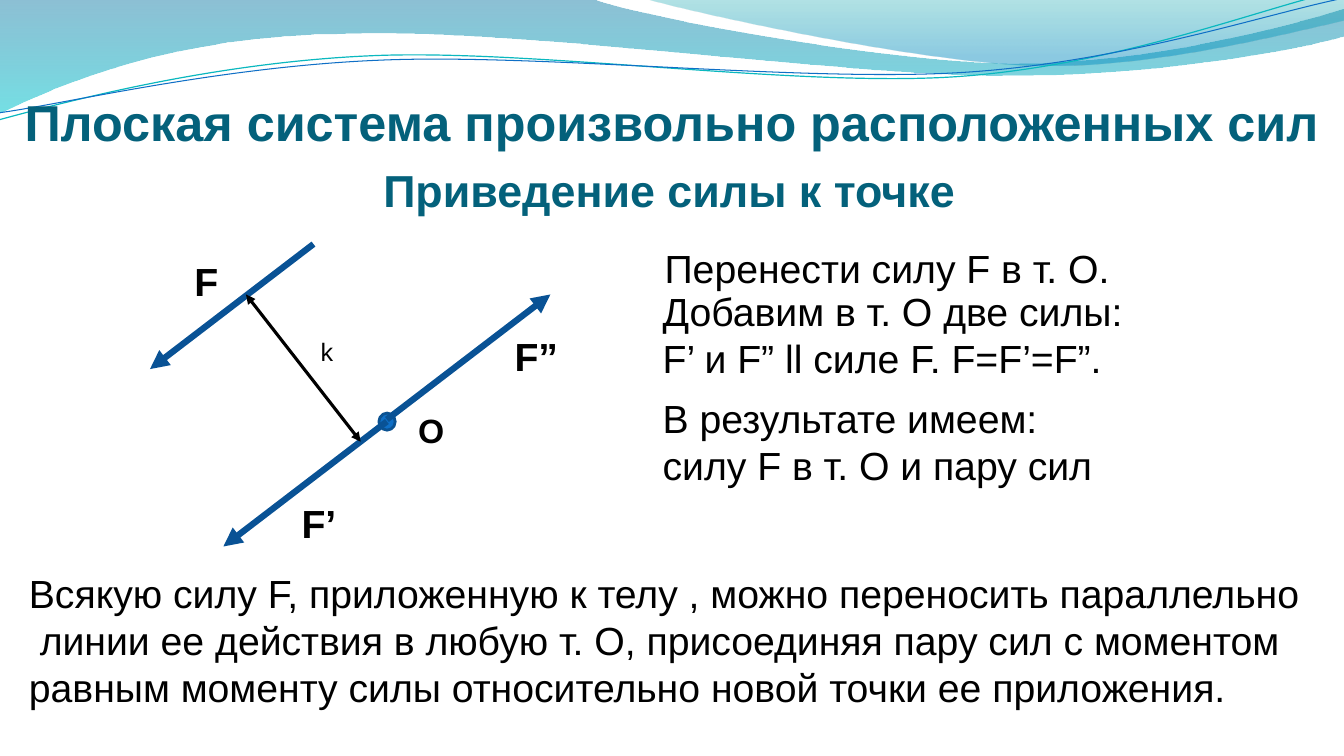
from dataclasses import dataclass

from lxml.etree import SubElement
from pptx import Presentation
from pptx.dml.color import RGBColor
from pptx.enum.shapes import MSO_CONNECTOR, MSO_SHAPE
from pptx.enum.text import MSO_AUTO_SIZE, PP_ALIGN
from pptx.oxml.ns import qn
from pptx.util import Cm, Pt


@dataclass(frozen=True)
class Theme:
    font: str = "Arial"
    heading: str = "04617B"
    ink: str = "000000"
    force: str = "095295"
    point_fill: str = "0F6FC6"
    point_line: str = "0B5292"
    teal_line: str = "0AB8BF"
    # Gradient stops: position, colour, opacity in percent
    wide_wave: tuple = ((0, "0074A1", 45), (1, "00C6CF", 55))
    right_wave: tuple = ((0, "00A1A9", 30), (0.8, "008BBF", 45))
    title_size: int = 36
    subtitle_size: int = 32
    body_size: int = 28
    point_size: int = 24
    arm_size: int = 18


THEME = Theme()
RIPPLE_ROTATION = 357.3


def rgb(value):
    return RGBColor.from_string(value)


def add_text(slide, text, left, top, width, height, size=THEME.body_size,
             color=THEME.ink, bold=False, align=PP_ALIGN.LEFT, wrap=False):
    frame = slide.shapes.add_textbox(Cm(left), Cm(top), Cm(width), Cm(height)).text_frame
    frame.word_wrap = wrap
    frame.auto_size = MSO_AUTO_SIZE.SHAPE_TO_FIT_TEXT
    for index, line in enumerate(text.split("\n")):
        paragraph = frame.paragraphs[0] if index == 0 else frame.add_paragraph()
        paragraph.alignment = align
        run = paragraph.add_run()
        run.text = line
        run.font.name = THEME.font
        run.font.size = Pt(size)
        run.font.bold = bold
        run.font.color.rgb = rgb(color)
        if not bold:
            run.font._element.set("kern", "0")


def add_segment(slide, start, end, color, weight, arrow_ends):
    """Straight line; arrow_ends holds headEnd and/or tailEnd."""
    segment = slide.shapes.add_connector(
        MSO_CONNECTOR.STRAIGHT, *(Cm(value) for value in (*start, *end)))
    segment.line.color.rgb = rgb(color)
    segment.line.width = Pt(weight)
    outline = segment.line._get_or_add_ln()
    for arrow_end in arrow_ends:
        SubElement(outline, qn(f"a:{arrow_end}"), type="triangle")
    SubElement(segment._element.spPr, qn("a:effectLst"))


def add_outline(slide, left, top, start, pieces, close):
    """Outline of straight (2 numbers) and cubic Bézier (6 numbers) pieces."""
    nodes = [start] + [piece[i:i + 2] for piece in pieces for i in range(0, len(piece), 2)]
    points = [(Cm(left + x), Cm(top + y)) for x, y in nodes]
    builder = slide.shapes.build_freeform(*points[0])
    builder.add_line_segments(points[1:], close=close)
    outline = builder.convert_to_shape()
    outline.shadow.inherit = False

    segments = iter(list(outline._element.iter(qn("a:lnTo"))))
    for piece in pieces:
        group = [next(segments) for _ in range(len(piece) // 2)]
        if len(group) == 3:
            curve = group[0].getparent().makeelement(qn("a:cubicBezTo"))
            group[0].addprevious(curve)
            for segment in group:
                curve.append(segment[0])
                segment.getparent().remove(segment)
    return outline


def add_wave(slide, left, top, start, pieces, stops):
    wave = add_outline(slide, left, top, start, pieces, close=True)
    wave.line.fill.background()
    wave.fill.gradient()
    wave.fill.gradient_angle = 270
    for stop, (position, color, opacity) in zip(wave.fill.gradient_stops, stops):
        stop.position = position
        stop.color.rgb = rgb(color)
        color_element = stop._gs.find(qn("a:srgbClr"))
        SubElement(color_element, qn("a:alpha"), val=str(opacity * 1000))


def add_ripple(slide, left, top, start, pieces, color, weight):
    ripple = add_outline(slide, left, top, start, pieces, close=False)
    ripple.rotation = RIPPLE_ROTATION
    ripple.fill.background()
    ripple.line.color.rgb = rgb(color)
    ripple.line.width = Pt(weight)


def add_banner(slide, left, top):
    add_wave(slide, left, top, (0, -0.03), (
        (14.91, -0.03),
        (16.1, 0.43, 22.48, 1.6, 25.68, 1.6),
        (28.91, 1.6, 32.46, 0.66, 33.86, 0.23),
        (33.91, 0.91),
        (33.3, 1.12, 29.46, 1.93, 25.25, 1.91),
        (21.06, 1.91, 12.93, 0.71, 8.71, 0.86),
        (4.37, 0.89, 1.55, 2.11, -0.03, 2.87),
    ), THEME.wide_wave)
    add_wave(slide, left, top, (16.23, -0.03), (
        (17.25, 0.28, 23.09, 1.57, 26.04, 1.65),
        (28.98, 1.75, 32.56, 0.81, 33.86, 0.53),
        (33.86, 0),
    ), THEME.right_wave)
    add_ripple(slide, left, top, (-0.08, 2.22), (
        (1.6, 1.85, 5.36, 1.03, 9.38, 1.05),
        (13.4, 1.06, 20.03, 2.36, 24.1, 2.27),
        (28.17, 2.18, 31.84, 0.9, 33.87, 0.55),
    ), THEME.teal_line, 0.85)
    add_ripple(slide, left, top, (-0.04, 2.04), (
        (1.57, 1.9, 5.54, 1.14, 9.61, 1.17),
        (13.65, 1.19, 20.19, 2.23, 24.24, 2.17),
        (28.3, 2.11, 31.91, 1.06, 33.93, 0.75),
    ), THEME.point_fill, 0.75)


def add_headings(slide, left, top, width):
    add_text(slide, "Плоская система произвольно расположенных сил",
             left, top, width, 1.8, size=THEME.title_size, color=THEME.heading,
             bold=True, align=PP_ALIGN.CENTER, wrap=True)
    subtitle_width = 15.04
    add_text(slide, "Приведение силы к точке",
             left + (width - subtitle_width) / 2, top + 1.79, subtitle_width, 1.63,
             size=THEME.subtitle_size, color=THEME.heading, bold=True)


def add_force_diagram(slide, left, top):
    point = slide.shapes.add_shape(
        MSO_SHAPE.OVAL, Cm(left + 5.77), Cm(top + 4.26), Cm(0.41), Cm(0.43))
    point.shadow.inherit = False
    point.fill.solid()
    point.fill.fore_color.rgb = rgb(THEME.point_fill)
    point.line.color.rgb = rgb(THEME.point_line)
    point.line.width = Pt(2)

    run, rise = 4.12, 3.15
    # Start of each force and its sense along the common direction
    for x, y, sense in ((run, 0, -1), (5.97, 4.42, 1), (5.97, 4.47, -1)):
        start = (left + x, top + y)
        end = (start[0] + sense * run, start[1] - sense * rise)
        add_segment(slide, start, end, THEME.force, 4.5, ("tailEnd",))
    add_segment(slide, (left + 2.42, top + 1.27), (left + 5.31, top + 4.98),
                THEME.ink, 2.25, ("headEnd", "tailEnd"))

    for label, x, y, width, height, size, bold in (
        ("F", 0.87, 0.2, 1.12, 1.45, THEME.body_size, True),
        ("F’", 3.57, 6.3, 1.4, 1.45, THEME.body_size, True),
        ("F”", 8.94, 2.1, 1.63, 1.45, THEME.body_size, True),
        ("O", 6.51, 4.05, 1.17, 1.27, THEME.point_size, True),
        ("k", 4.05, 2.2, 0.84, 1.02, THEME.arm_size, False),
    ):
        add_text(slide, label, left + x, top + y, width, height, size=size, bold=bold)


def add_steps(slide, left, top):
    add_text(slide, "Перенести силу F в т. О.", left + 0.05, top, 12.14, 1.45)
    add_text(slide, "Добавим в т. О две силы:\nF’ и F” ll силе F. F=F’=F”.",
             left, top + 1.08, 12.78, 2.64, wrap=True)
    add_text(slide, "В результате имеем:\nсилу F в т. О и пару сил",
             left, top + 3.77, 11.73, 2.64)


def add_conclusion(slide, left, top, width):
    add_text(slide,
             "Всякую силу F, приложенную к телу , можно переносить параллельно\n"
             " линии ее действия в любую т. О, присоединяя пару сил с моментом\n"
             "равным моменту силы относительно новой точки ее приложения.",
             left, top, width, 3.84)


def main():
    presentation = Presentation()
    presentation.slide_width = Cm(33.87)
    presentation.slide_height = Cm(19.05)
    slide = presentation.slides.add_slide(presentation.slide_layouts[6])
    add_banner(slide, 0, 0)
    add_headings(slide, -0.29, 2.18, 34.44)
    add_force_diagram(slide, 3.78, 6.15)
    add_steps(slide, 16.45, 6.03)
    add_conclusion(slide, 0.48, 14.21, 32.92)
    presentation.save("out.pptx")


if __name__ == "__main__":
    main()
